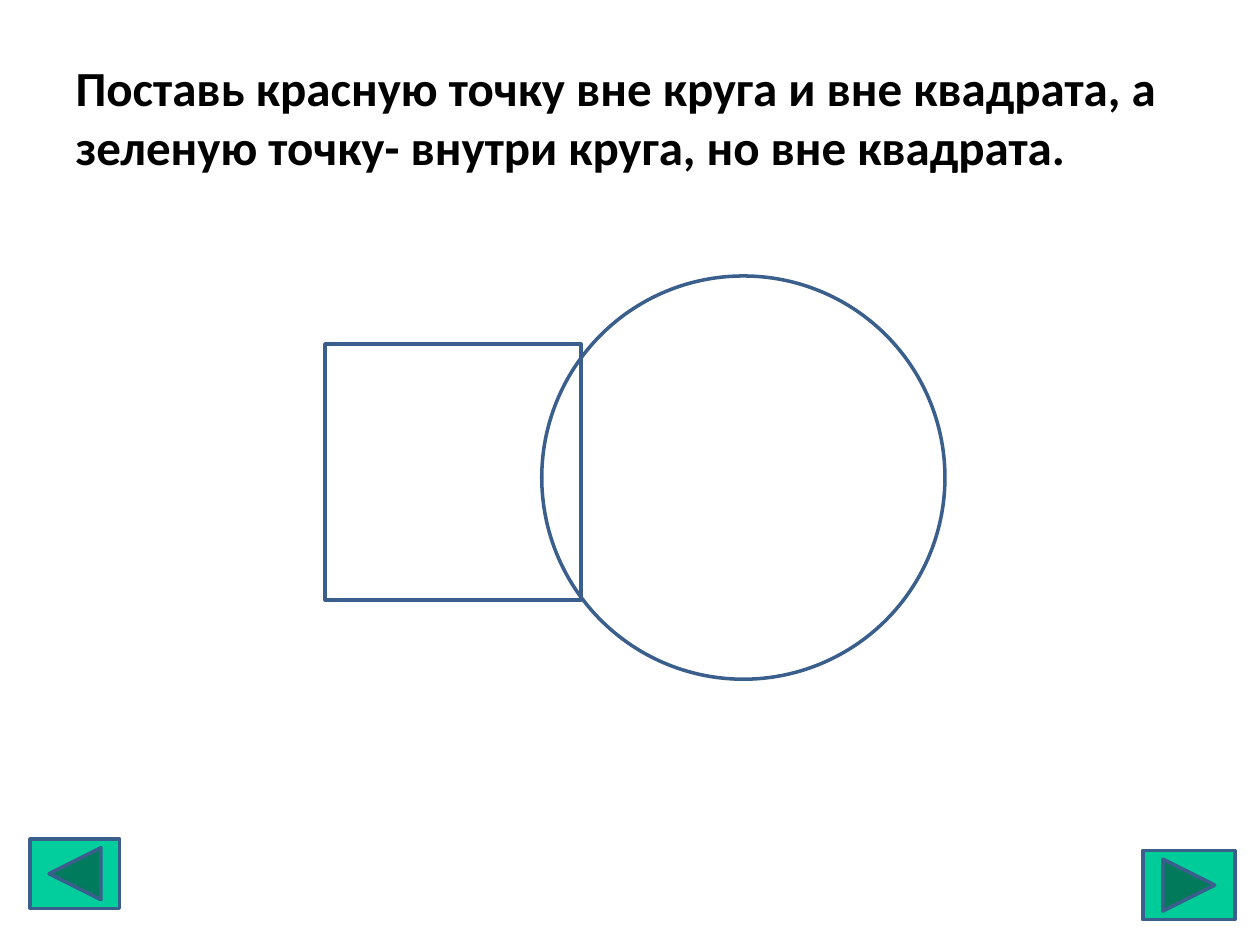
from dataclasses import dataclass

from pptx import Presentation
from pptx.dml.color import RGBColor
from pptx.enum.shapes import MSO_SHAPE as Shape
from pptx.enum.text import MSO_ANCHOR as Anchor, MSO_AUTO_SIZE as AutoSize, PP_ALIGN as Align
from pptx.util import Inches, Pt


@dataclass(frozen=True)
class Theme:
    font: str = "Calibri"
    title_size: int = 28
    line_width: int = 2
    text: str = "000000"
    paper: str = "FFFFFF"
    outline: str = "3A5F8C"
    next_button: str = "00CC99"
    back_button: str = "02CE9D"


theme = Theme()
deck = Presentation()
deck.slide_width, deck.slide_height = Inches(10), Inches(7.5)
page = deck.slides.add_slide(deck.slide_layouts[5])


def place(left, top, width, height):
    """Turn shares of the slide, in percent, into a position and size."""
    across, down = deck.slide_width / 100, deck.slide_height / 100
    return [round(n) for n in (left * across, top * down, width * across, height * down)]


title = page.shapes.title
title.left, title.top, title.width, title.height = place(5, 4, 90, 16.67)
frame = title.text_frame
frame.word_wrap = True
frame.auto_size = AutoSize.NONE
frame.vertical_anchor = Anchor.MIDDLE
para = frame.paragraphs[0]
para.alignment = Align.LEFT
span = para.add_run()
span.text = ("Поставь красную точку вне круга и вне квадрата, "
             "а зеленую точку- внутри круга, но вне квадрата.")
span.font.name = theme.font
span.font.size = Pt(theme.title_size)
span.font.bold = True
span.font.color.rgb = RGBColor.from_string(theme.text)

# Each figure: preset, place in percent of the slide, fill (None leaves it clear)
figures = [
    (Shape.RECTANGLE, (25.8, 36.4, 20.3, 27.07), theme.paper),
    (Shape.OVAL, (43, 29.2, 32, 42.67), None),
    (Shape.ACTION_BUTTON_FORWARD_OR_NEXT, (90.7, 90, 7.3, 7.33), theme.next_button),
    (Shape.ACTION_BUTTON_BACK_OR_PREVIOUS, (2.4, 88.8, 7.1, 7.33), theme.back_button),
]
for preset, shares, fill in figures:
    figure = page.shapes.add_shape(preset, *place(*shares))
    figure.shadow.inherit = False
    if fill:
        figure.fill.solid()
        figure.fill.fore_color.rgb = RGBColor.from_string(fill)
    else:
        figure.fill.background()
    figure.line.color.rgb = RGBColor.from_string(theme.outline)
    figure.line.width = Pt(theme.line_width)

deck.save("out.pptx")
